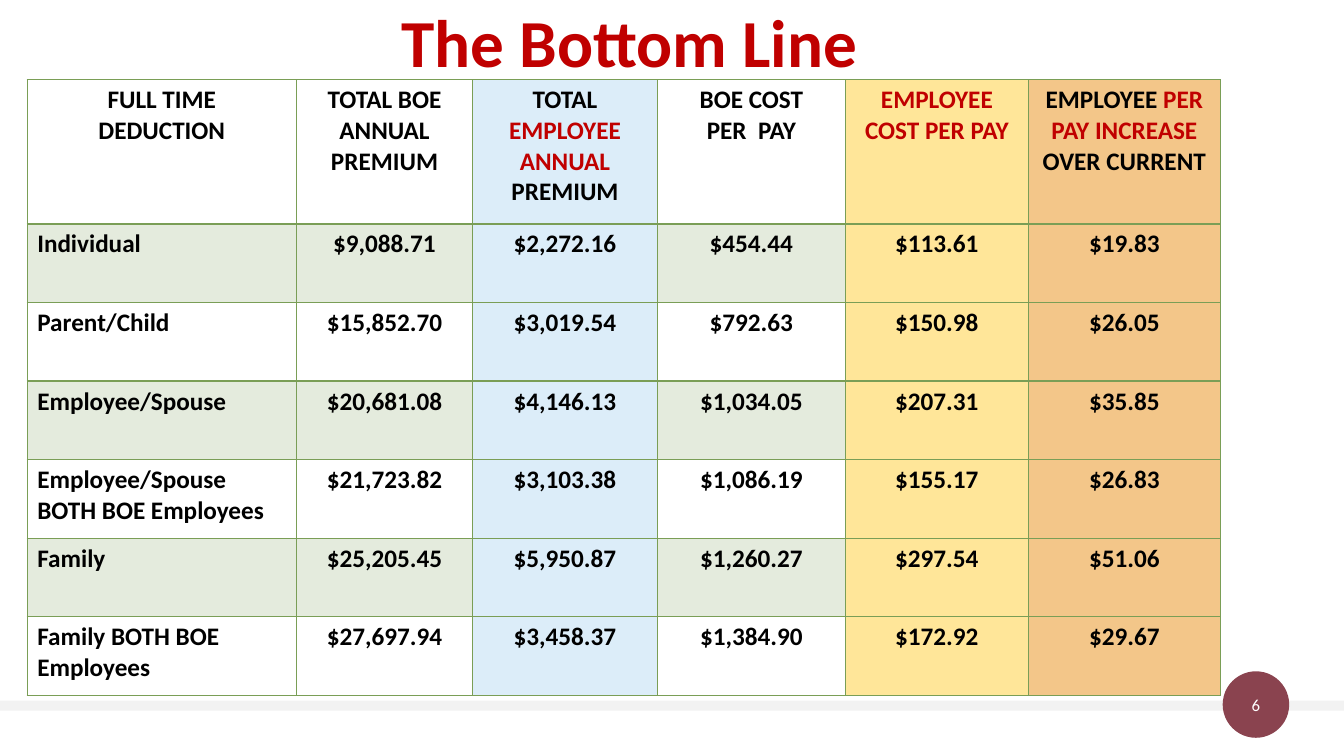
from dataclasses import dataclass
from typing import Any

from lxml.etree import SubElement
from pptx import Presentation
from pptx.dml.color import RGBColor
from pptx.enum.shapes import MSO_SHAPE
from pptx.enum.text import MSO_ANCHOR, PP_ALIGN
from pptx.oxml.ns import qn
from pptx.util import Inches, Pt

COLORS = {
    "white": "FFFFFF",
    "black": "000000",
    "red": "C00000",
    "green": "7A9E56",
    "blue": "DCEDF9",
    "yellow": "FFE699",
    "orange": "F3C689",
    "stripe": "F2F2F2",
    "badge": "8A434F",
}
FONT = "Calibri"
CELL_UNIT = 0.1
SLIDE_COLUMNS, SLIDE_ROWS = 133.33, 75
HEADER_HEIGHT, BODY_HEIGHT = 14.3, 7.8
BAND_OPACITY = 20


@dataclass(frozen=True)
class Area:
    column: float
    row: float
    columns: float
    rows: float

    def lengths(self) -> list[int]:
        return [grid(value) for value in (self.column, self.row, self.columns, self.rows)]


@dataclass(frozen=True)
class Span:
    text: str
    color: str = "black"


@dataclass(frozen=True)
class PlanColumn:
    width: float
    heading: list[list[Span]]
    fill: str | None = None


@dataclass(frozen=True)
class FooterShape:
    kind: MSO_SHAPE
    area: Area
    fill: str
    text: str = ""


PLAN_COLUMNS = [
    PlanColumn(26.7, [[Span("FULL TIME")], [Span("DEDUCTION")]]),
    PlanColumn(17.5, [[Span("TOTAL BOE ANNUAL PREMIUM")]]),
    PlanColumn(18.3, [[Span("TOTAL "), Span("EMPLOYEE ANNUAL", "red"), Span(" PREMIUM")]], "blue"),
    PlanColumn(18.7, [[Span("BOE COST")], [Span("PER  PAY")]]),
    PlanColumn(18.1, [[Span("EMPLOYEE COST PER PAY", "red")]], "yellow"),
    PlanColumn(19.1, [[Span("EMPLOYEE "), Span("PER PAY INCREASE ", "red"), Span("OVER CURRENT")]], "orange"),
]
PLANS = [
    ("Individual", "$9,088.71", "$2,272.16", "$454.44", "$113.61", "$19.83"),
    ("Parent/Child", "$15,852.70", "$3,019.54", "$792.63", "$150.98", "$26.05"),
    ("Employee/Spouse", "$20,681.08", "$4,146.13", "$1,034.05", "$207.31", "$35.85"),
    ("Employee/Spouse BOTH BOE Employees", "$21,723.82", "$3,103.38", "$1,086.19", "$155.17", "$26.83"),
    ("Family", "$25,205.45", "$5,950.87", "$1,260.27", "$297.54", "$51.06"),
    ("Family BOTH BOE Employees", "$27,697.94", "$3,458.37", "$1,384.90", "$172.92", "$29.67"),
]
FOOTER = [
    FooterShape(MSO_SHAPE.RECTANGLE, Area(0, 69.5, SLIDE_COLUMNS, 1), "stripe"),
    FooterShape(MSO_SHAPE.OVAL, Area(121.3, 66.6, 6.6, 6.6), "badge", "6"),
]


def grid(units: float) -> int:
    return Inches(units * CELL_UNIT)


def color(name: str) -> RGBColor:
    return RGBColor.from_string(COLORS[name])


def apply(target: Any, values: dict[str, Any]) -> None:
    for name, value in values.items():
        setattr(target, name, value)


def write(frame: Any, lines: list[list[Span]], size: int, bold: bool, align: PP_ALIGN) -> None:
    for index, line in enumerate(lines):
        para = frame.paragraphs[0] if index == 0 else frame.add_paragraph()
        para.alignment = align
        for span in line:
            run = para.add_run()
            run.text = span.text
            apply(run.font, {"name": FONT, "size": Pt(size), "bold": bold})
            run.font.color.rgb = color(span.color)


def add_title(page: Any) -> None:
    title = page.shapes.title
    left, top, width, height = Area(3.8, 0, 118.3, 9.1).lengths()
    apply(title, {"left": left, "top": top, "width": width, "height": height})
    apply(title.text_frame, {
        "margin_left": 0, "margin_right": grid(1), "margin_top": grid(0.5),
        "margin_bottom": grid(0.5), "vertical_anchor": MSO_ANCHOR.MIDDLE, "word_wrap": True,
    })
    write(title.text_frame, [[Span("The Bottom Line", "red")]], 48, True, PP_ALIGN.CENTER)
    title.text_frame.paragraphs[0].line_spacing = 0.9


def add_footer_shape(page: Any, item: FooterShape) -> None:
    shape = page.shapes.add_shape(item.kind, *item.area.lengths())
    shape.shadow.inherit = False
    shape.fill.solid()
    shape.fill.fore_color.rgb = color(item.fill)
    shape.line.fill.background()
    if item.text:
        margins = dict.fromkeys(("margin_left", "margin_right", "margin_top", "margin_bottom"), 0)
        apply(shape.text_frame, margins | {"vertical_anchor": MSO_ANCHOR.MIDDLE})
        write(shape.text_frame, [[Span(item.text, "white")]], 12, False, PP_ALIGN.CENTER)


def add_borders(cell: Any, widths: dict[str, int]) -> None:
    properties = cell._tc.get_or_add_tcPr()
    for index, (side, width) in enumerate(widths.items()):
        line = SubElement(properties, qn(f"a:{side}"), w=str(Pt(width)))
        fill = SubElement(line, qn("a:solidFill"))
        SubElement(fill, qn("a:srgbClr"), val=COLORS["green"])
        properties.insert(index, line)


def fill_cell(cell: Any, fill: str, opacity: int = 100) -> None:
    cell.fill.solid()
    cell.fill.fore_color.rgb = color(fill)
    if opacity < 100:
        swatch = cell._tc.tcPr.find(f".//{qn('a:solidFill')}/{qn('a:srgbClr')}")
        SubElement(swatch, qn("a:alpha"), val=str(opacity * 1000))


def add_plan_table(page: Any) -> None:
    heights = [HEADER_HEIGHT] + [BODY_HEIGHT] * len(PLANS)
    area = Area(2.7, 7.9, sum(column.width for column in PLAN_COLUMNS), sum(heights))
    table = page.shapes.add_table(len(heights), len(PLAN_COLUMNS), *area.lengths()).table
    apply(table, {"first_row": False, "horz_banding": False})
    for row, height in zip(table.rows, heights):
        row.height = grid(height)
    for column_index, column in enumerate(PLAN_COLUMNS):
        table.columns[column_index].width = grid(column.width)
        bodies = [[[Span(plan[column_index])]] for plan in PLANS]
        for row_index, lines in enumerate([column.heading, *bodies]):
            cell = table.cell(row_index, column_index)
            is_label = row_index > 0 and column_index == 0
            align = PP_ALIGN.LEFT if is_label else PP_ALIGN.CENTER
            write(cell.text_frame, lines, 18, True, align)
            if column.fill:
                fill_cell(cell, column.fill)
            elif row_index % 2:
                fill_cell(cell, "green", BAND_OPACITY)
            else:
                fill_cell(cell, "white")
            top = 2 if row_index == 1 else 1
            bottom = 2 if row_index == 0 else 1
            add_borders(cell, {"lnL": 1, "lnR": 1, "lnT": top, "lnB": bottom})


def main() -> None:
    deck = Presentation()
    apply(deck, {"slide_width": grid(SLIDE_COLUMNS), "slide_height": grid(SLIDE_ROWS)})
    page = deck.slides.add_slide(deck.slide_layouts.get_by_name("Title Only"))
    for item in FOOTER:
        add_footer_shape(page, item)
    add_title(page)
    add_plan_table(page)
    deck.save("out.pptx")


if __name__ == "__main__":
    main()
